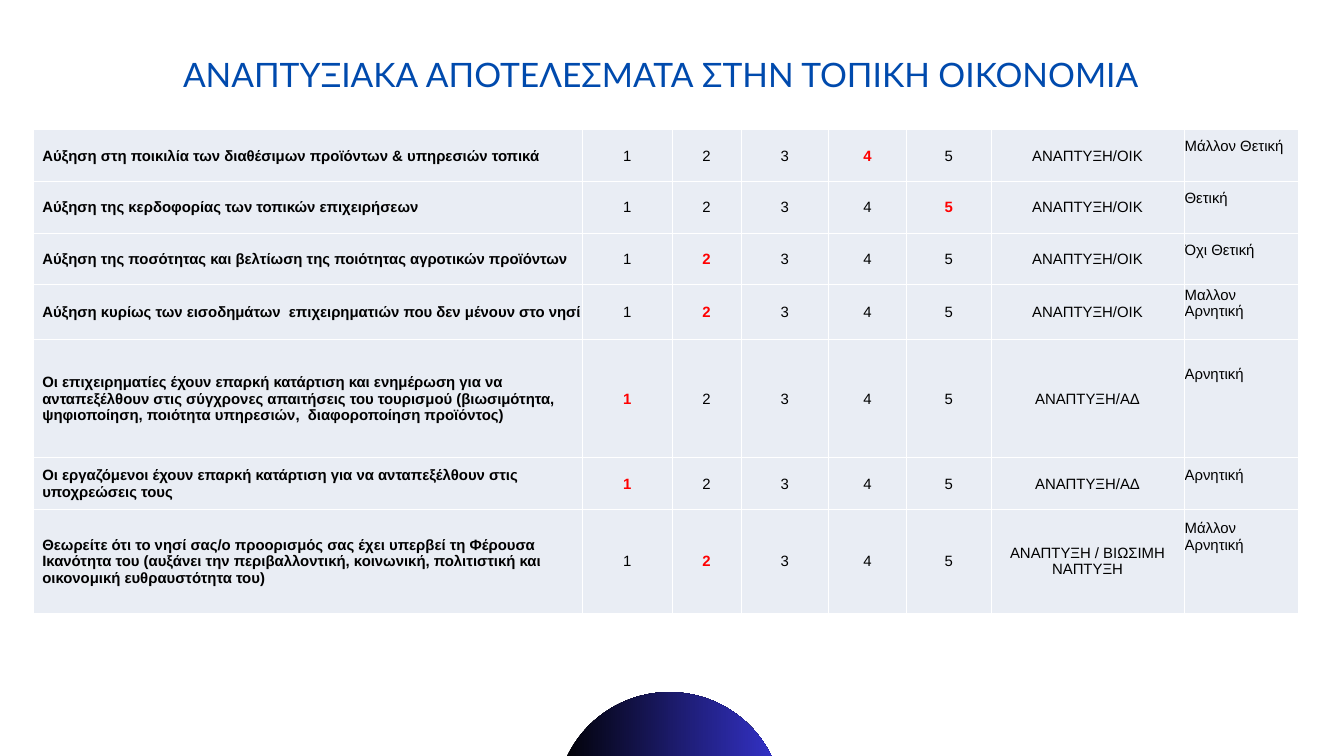
from lxml import etree
from pptx import Presentation
from pptx.dml.color import RGBColor
from pptx.enum.shapes import MSO_SHAPE
from pptx.enum.text import MSO_ANCHOR, PP_ALIGN
from pptx.oxml.ns import qn
from pptx.util import Inches, Pt

BLUE, BLACK, RED, WHITE, CELL_FILL = "004AAD", "000000", "FF0000", "FFFFFF", "E9EDF4"
SCORES = range(1, 6)
COLUMN_WIDTHS = [8.17, 1.33, 1.03, 1.3, 1.16, 1.26, 2.87, 1.71]
SHORT_ROW = 0.77

# Statement, chosen score, category, verdict, row height
RESULTS = [
    ("Αύξηση στη ποικιλία των διαθέσιμων προϊόντων & υπηρεσιών τοπικά",
     4, "ΑΝΑΠΤΥΞΗ/ΟΙΚ", "Μάλλον Θετική", SHORT_ROW),
    ("Αύξηση της κερδοφορίας των τοπικών επιχειρήσεων",
     5, "ΑΝΑΠΤΥΞΗ/ΟΙΚ", "Θετική", SHORT_ROW),
    ("Αύξηση της ποσότητας και βελτίωση της ποιότητας αγροτικών προϊόντων",
     2, "ΑΝΑΠΤΥΞΗ/ΟΙΚ", "Όχι Θετική", SHORT_ROW),
    ("Αύξηση κυρίως των εισοδημάτων  επιχειρηματιών που δεν μένουν στο νησί",
     2, "ΑΝΑΠΤΥΞΗ/ΟΙΚ", "Μαλλον Αρνητική", SHORT_ROW),
    ("Οι επιχειρηματίες έχουν επαρκή κατάρτιση και ενημέρωση για να ανταπεξέλθουν "
     "στις σύγχρονες απαιτήσεις του τουρισμού (βιωσιμότητα, ψηφιοποίηση, "
     "ποιότητα υπηρεσιών,  διαφοροποίηση προϊόντος)",
     1, "ΑΝΑΠΤΥΞΗ/ΑΔ", "Αρνητική", 1.76),
    ("Οι εργαζόμενοι έχουν επαρκή κατάρτιση για να ανταπεξέλθουν στις "
     "υποχρεώσεις τους",
     1, "ΑΝΑΠΤΥΞΗ/ΑΔ", "Αρνητική", SHORT_ROW),
    ("Θεωρείτε ότι το νησί σας/ο προορισμός σας έχει υπερβεί τη Φέρουσα Ικανότητα "
     "του (αυξάνει την περιβαλλοντική, κοινωνική, πολιτιστική και οικονομική "
     "ευθραυστότητα του)",
     2, "ΑΝΑΠΤΥΞΗ / ΒΙΩΣΙΜΗ ΝΑΠΤΥΞΗ", "Μάλλον Αρνητική", 1.54),
]


def color(hex_value):
    return RGBColor.from_string(hex_value)


def add_run(paragraph, text, font_name, size, hex_value, bold=False):
    run = paragraph.add_run()
    run.text = text
    run.font.name = font_name
    run.font.size = Pt(size)
    run.font.bold = bold
    run.font.color.rgb = color(hex_value)


def add_title(slide, left, top, width, height):
    box = slide.shapes.add_textbox(Inches(left), Inches(top), Inches(width), Inches(height))
    frame = box.text_frame
    frame.word_wrap = True
    frame.vertical_anchor = MSO_ANCHOR.MIDDLE
    paragraph = frame.paragraphs[0]
    paragraph.alignment = PP_ALIGN.CENTER
    add_run(paragraph, "ΑΝΑΠΤΥΞΙΑΚΑ ΑΠΟΤΕΛΕΣΜΑΤΑ ΣΤΗΝ ΤΟΠΙΚΗ ΟΙΚΟΝΟΜΙΑ", "Lato", 36, BLUE)


def add_borders(cell):
    properties = cell._tc.get_or_add_tcPr()
    for index, side in enumerate(("a:lnL", "a:lnR", "a:lnT", "a:lnB")):
        line = etree.Element(qn(side), w=str(Pt(1)))
        fill = etree.SubElement(line, qn("a:solidFill"))
        etree.SubElement(fill, qn("a:srgbClr"), val=WHITE)
        properties.insert(index, line)


def fill_cell(cell, text, alignment, hex_value=BLACK, bold=False, indent=0, bottom=0):
    cell.fill.solid()
    cell.fill.fore_color.rgb = color(CELL_FILL)
    cell.vertical_anchor = MSO_ANCHOR.MIDDLE
    cell.margin_left = cell.margin_top = cell.margin_right = Inches(0.01)
    cell.margin_bottom = Inches(bottom)
    add_borders(cell)
    paragraph = cell.text_frame.paragraphs[0]
    paragraph.alignment = alignment
    if indent:
        paragraph._p.get_or_add_pPr().set("marL", str(Inches(indent)))
    add_run(paragraph, text, "Arial", 16, hex_value, bold)


def add_results_table(slide, left, top):
    width, height = sum(COLUMN_WIDTHS), sum(result[-1] for result in RESULTS)
    table = slide.shapes.add_table(len(RESULTS), len(COLUMN_WIDTHS), Inches(left),
                                   Inches(top), Inches(width), Inches(height)).table
    table.first_row = table.horz_banding = False
    for column, column_width in zip(table.columns, COLUMN_WIDTHS):
        column.width = Inches(column_width)
    for row, (statement, chosen, category, verdict, row_height) in zip(table.rows, RESULTS):
        row.height = Inches(row_height)
        cells = list(row.cells)
        fill_cell(cells[0], statement, PP_ALIGN.LEFT, bold=True, indent=0.12)
        for score in SCORES:
            is_chosen = score == chosen
            fill_cell(cells[score], str(score), PP_ALIGN.CENTER,
                      RED if is_chosen else BLACK, is_chosen)
        fill_cell(cells[6], category, PP_ALIGN.CENTER)
        # Verdicts sit above the middle, more so in tall rows
        fill_cell(cells[7], verdict, PP_ALIGN.LEFT,
                  bottom=0.27 if row_height == SHORT_ROW else 0.73)


def add_gradient_circle(slide, left, top, diameter):
    circle = slide.shapes.add_shape(MSO_SHAPE.OVAL, Inches(left), Inches(top),
                                    Inches(diameter), Inches(diameter))
    circle.shadow.inherit = False
    circle.line.fill.background()
    circle.fill.gradient()
    circle.fill.gradient_angle = 0
    for stop, position, hex_value in zip(circle.fill.gradient_stops, (0, 1), (BLACK, "3533CD")):
        stop.position = position
        stop.color.rgb = color(hex_value)


def main():
    presentation = Presentation()
    presentation.slide_width = Inches(20)
    presentation.slide_height = Inches(11.25)
    slide = presentation.slides.add_slide(presentation.slide_layouts[6])
    add_title(slide, 0.5, 0.47, 18.67, 1.25)
    add_results_table(slide, 0.5, 1.93)
    add_gradient_circle(slide, 8.27, 10.3, 3.38)
    presentation.save("out.pptx")


if __name__ == "__main__":
    main()
